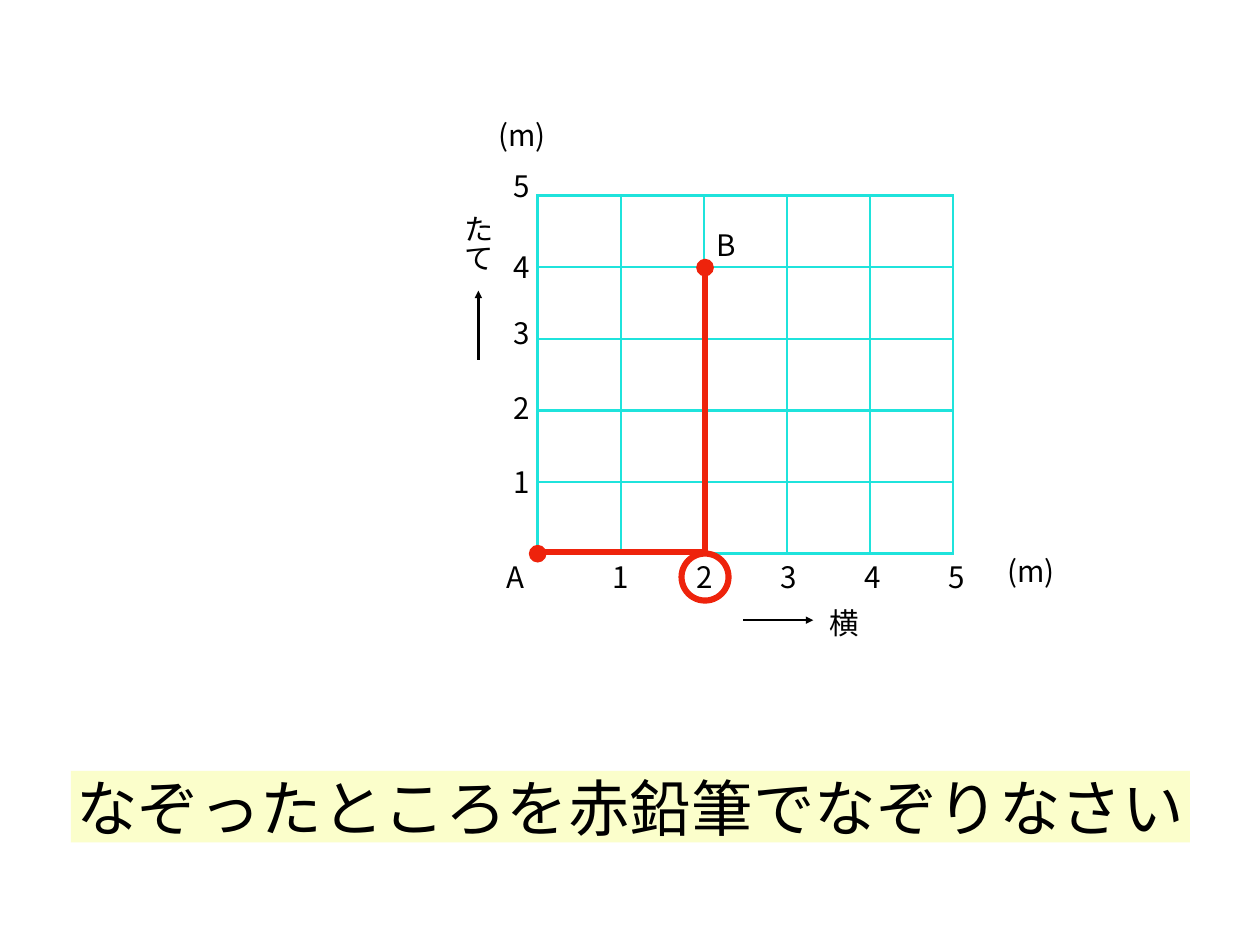
from dataclasses import dataclass

from lxml.etree import SubElement
from pptx import Presentation
from pptx.dml.color import RGBColor
from pptx.enum.shapes import MSO_CONNECTOR, MSO_SHAPE
from pptx.enum.text import MSO_ANCHOR, PP_ALIGN
from pptx.oxml.ns import qn
from pptx.util import Pt


@dataclass(frozen=True)
class Theme:
    font: str = "Noto Sans CJK JP"
    ink: str = "000000"
    grid: str = "1FE3DC"
    route: str = "EE230C"
    banner: str = "FBFECB"
    label_size: float = 24
    banner_size: float = 50
    thin: float = 2
    thick: float = 5
    inset: float = 4.32


THEME = Theme()
CELLS = 5
GRID_LEFT, GRID_TOP, GRID_BOTTOM = 437, 159, 450
CELL_WIDTH, CELL_HEIGHT = 67.5, 58.2
GRID_RIGHT = GRID_LEFT + CELLS * CELL_WIDTH
TURN_X, GOAL_Y = 573, 217.5
DOT_SIZE, RING_SIZE = 14.4, 38.2
HEIGHT_LABEL_X, WIDTH_LABEL_Y = 424, 468.7
HEIGHT_LABEL_YS = (391.7, 331.2, 270.7, 216.7, 151.2)
WIDTH_LABEL_X, WIDTH_LABEL_STEP = 504, 68.4


def apply_format(target, values):
    for name, value in values.items():
        setattr(target, name, value)


def write_text(shape, text, size):
    frame = shape.text_frame
    apply_format(frame, {
        "word_wrap": False,
        "vertical_anchor": MSO_ANCHOR.MIDDLE,
        "margin_left": Pt(THEME.inset),
        "margin_right": Pt(THEME.inset),
        "margin_top": Pt(THEME.inset),
        "margin_bottom": Pt(THEME.inset),
    })
    paragraph = frame.paragraphs[0]
    paragraph.alignment = PP_ALIGN.CENTER
    run = paragraph.add_run()
    run.text = text
    apply_format(run.font, {"name": THEME.font, "size": Pt(size)})
    run.font.color.rgb = RGBColor.from_string(THEME.ink)
    SubElement(run.font._element, qn("a:ea"), typeface=THEME.font)


def add_label(slide, text, center_x, center_y, width=32, height=32, vertical=False):
    shape = slide.shapes.add_textbox(
        Pt(center_x - width / 2), Pt(center_y - height / 2), Pt(width), Pt(height))
    write_text(shape, text, THEME.label_size)
    if vertical:
        shape.text_frame._txBody.bodyPr.set("vert", "eaVert")


def add_line(slide, start, end, color, width, arrow=False):
    connector = slide.shapes.add_connector(
        MSO_CONNECTOR.STRAIGHT, *(Pt(value) for value in (*start, *end)))
    connector.line.color.rgb = RGBColor.from_string(color)
    connector.line.width = Pt(width)
    if arrow:
        SubElement(connector.line._get_or_add_ln(), qn("a:tailEnd"), type="triangle")
    SubElement(connector._element.spPr, qn("a:effectLst"))


def add_circle(slide, center_x, center_y, diameter, filled=True):
    shape = slide.shapes.add_shape(
        MSO_SHAPE.OVAL, Pt(center_x - diameter / 2), Pt(center_y - diameter / 2),
        Pt(diameter), Pt(diameter))
    shape.shadow.inherit = False
    color = RGBColor.from_string(THEME.route)
    if filled:
        shape.fill.solid()
        shape.fill.fore_color.rgb = color
        shape.line.fill.background()
    else:
        shape.fill.background()
        shape.line.color.rgb = color
        shape.line.width = Pt(THEME.thick)


def add_banner(slide, text, left, top, width, height):
    shape = slide.shapes.add_shape(
        MSO_SHAPE.RECTANGLE, Pt(left), Pt(top), Pt(width), Pt(height))
    shape.shadow.inherit = False
    shape.fill.solid()
    shape.fill.fore_color.rgb = RGBColor.from_string(THEME.banner)
    shape.line.fill.background()
    write_text(shape, text, THEME.banner_size)


def add_grid(slide):
    for index in range(CELLS + 1):
        x = GRID_LEFT + index * CELL_WIDTH
        y = GRID_TOP + index * CELL_HEIGHT
        add_line(slide, (x, GRID_BOTTOM), (x, GRID_TOP), THEME.grid, THEME.thin)
        add_line(slide, (GRID_LEFT - 1, y), (GRID_RIGHT + 1, y), THEME.grid, THEME.thin)


def add_axis_labels(slide):
    for number, center_y in enumerate(HEIGHT_LABEL_YS, start=1):
        center_x = WIDTH_LABEL_X + (number - 1) * WIDTH_LABEL_STEP
        add_label(slide, str(number), HEIGHT_LABEL_X, center_y)
        add_label(slide, str(number), center_x, WIDTH_LABEL_Y)
    add_label(slide, "(m)", 424.4, 109.4, width=48)
    add_label(slide, "(m)", 837.7, 463.7, width=48)
    add_label(slide, "たて", 388.8, 198.4, height=57, vertical=True)
    add_label(slide, "横", 686.2, 506.2)
    add_line(slide, (388.8, 292.3), (388.8, 236.2), THEME.ink, THEME.thin, arrow=True)
    add_line(slide, (604, 504), (661, 504), THEME.ink, THEME.thin, arrow=True)


def add_route(slide):
    add_label(slide, "A", 419, WIDTH_LABEL_Y)
    add_label(slide, "B", 590.4, 198.7)
    add_circle(slide, GRID_LEFT, GRID_BOTTOM, DOT_SIZE)
    add_circle(slide, TURN_X, GOAL_Y, DOT_SIZE)
    add_line(slide, (TURN_X, 451.4), (TURN_X, 216), THEME.route, THEME.thick)
    add_circle(slide, TURN_X, 469, RING_SIZE, filled=False)
    add_line(slide, (TURN_X, 448.6), (435.6, 448.6), THEME.route, THEME.thick)


def main():
    presentation = Presentation()
    apply_format(presentation, {"slide_width": Pt(1024), "slide_height": Pt(768)})
    slide = presentation.slides.add_slide(presentation.slide_layouts[6])
    add_grid(slide)
    add_axis_labels(slide)
    add_route(slide)
    add_banner(slide, "なぞったところを赤鉛筆でなぞりなさい", 57.6, 626.4, 909.4, 58.3)
    presentation.save("out.pptx")


if __name__ == "__main__":
    main()
